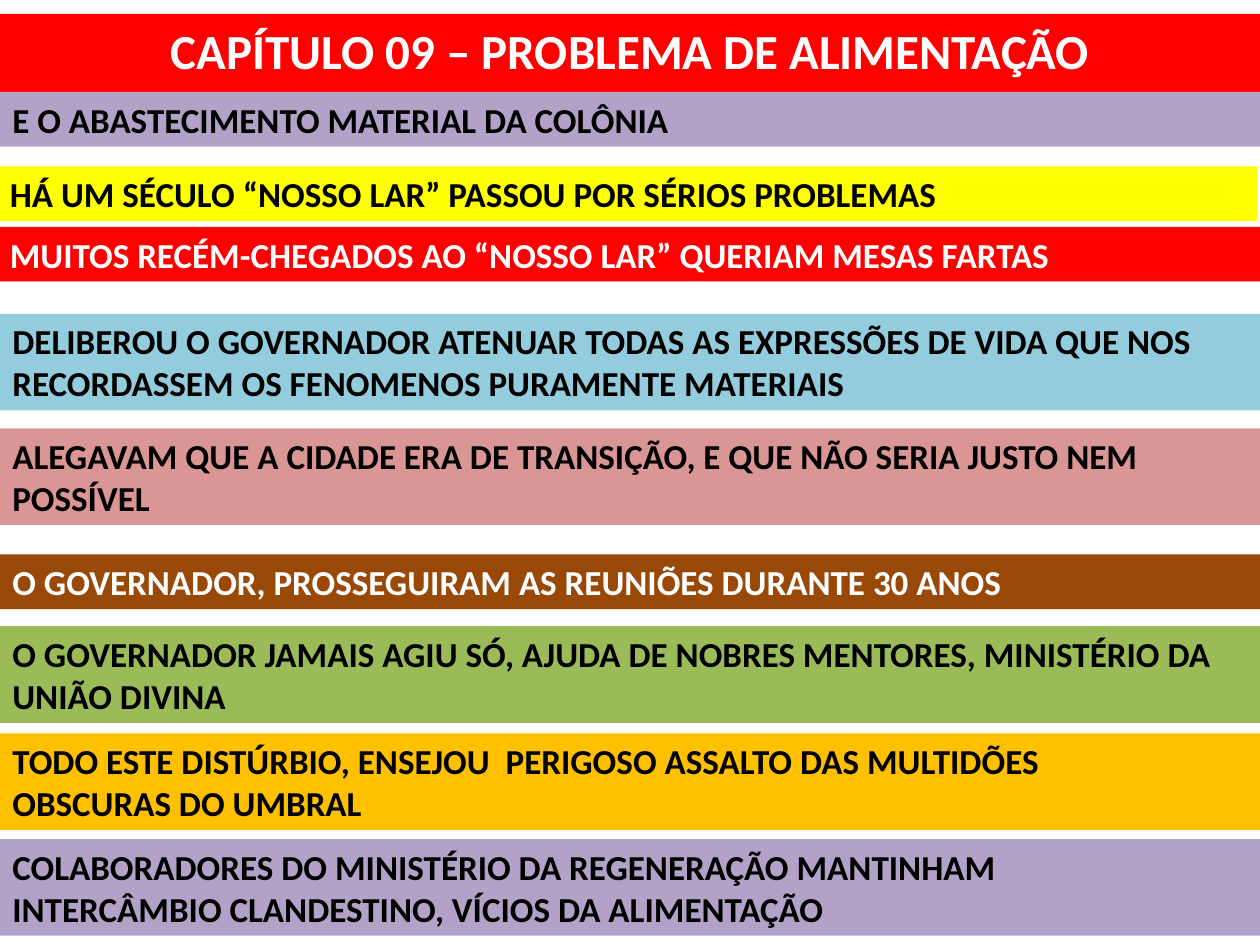
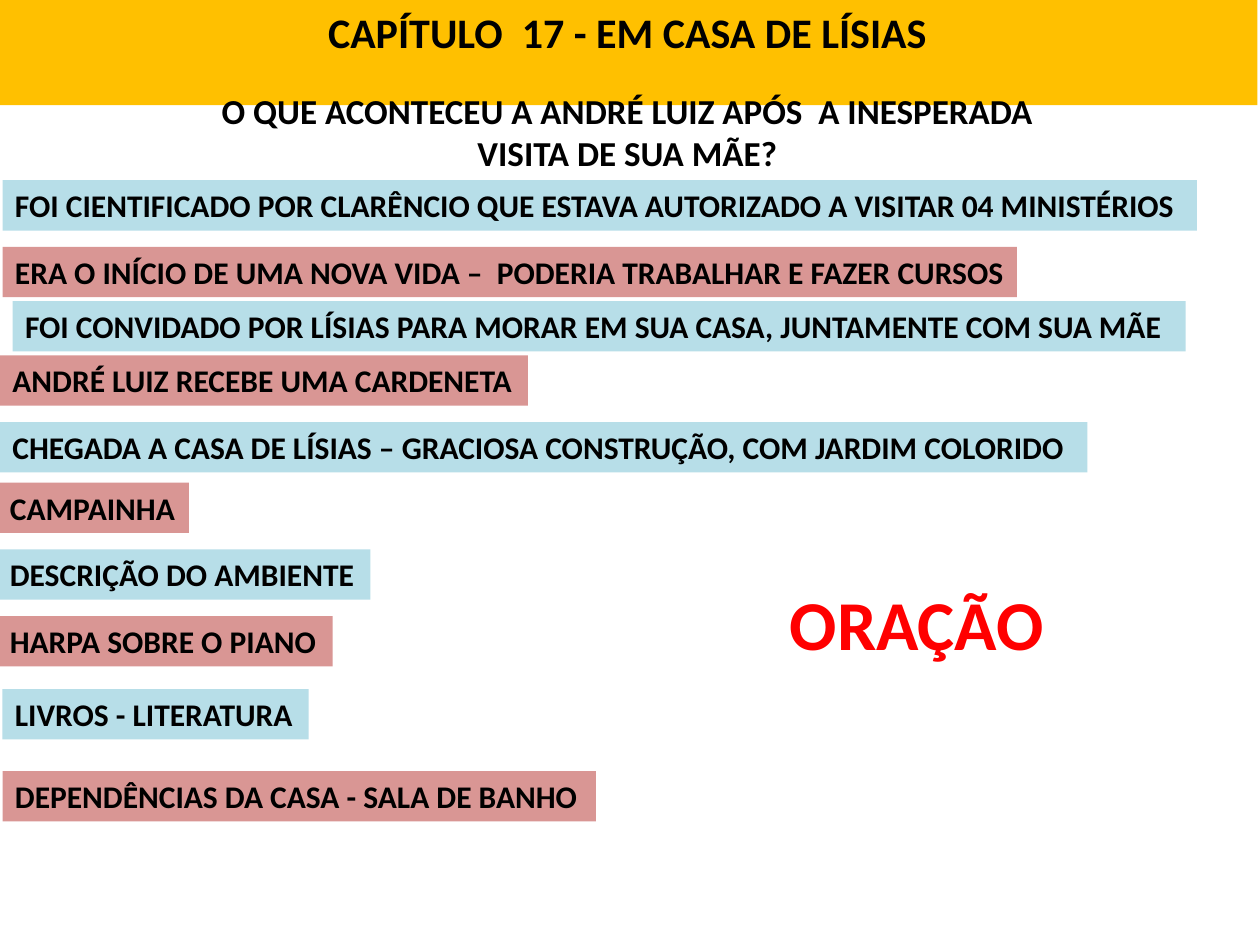
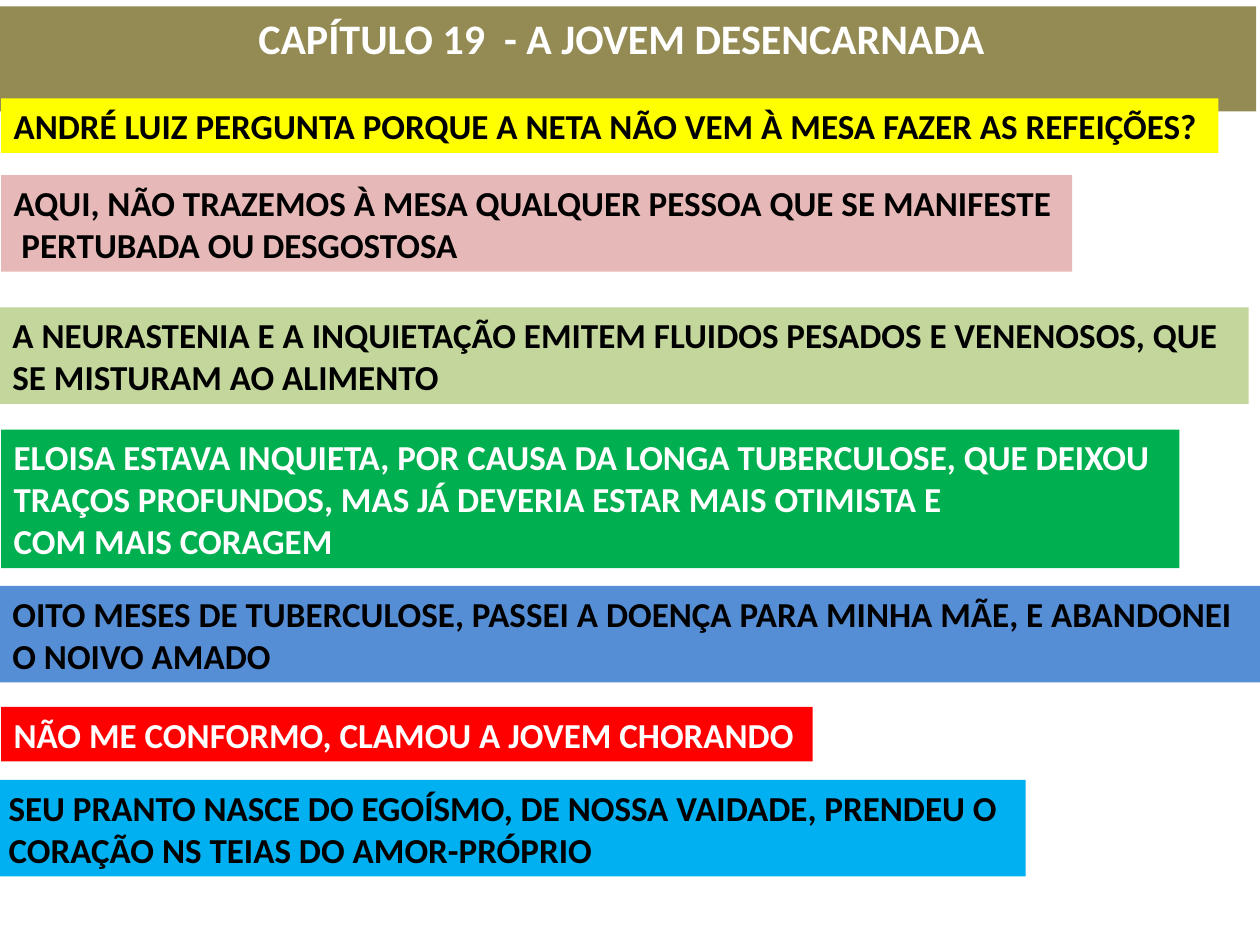
from pptx import Presentation
from pptx import util as u
from pptx.dml.color import RGBColor
from pptx.enum import text as t

BLACK = RGBColor(0x00, 0x00, 0x00)
WHITE = RGBColor(0xFF, 0xFF, 0xFF)
RED = RGBColor(0xFF, 0x00, 0x00)
YELLOW = RGBColor(0xFF, 0xFF, 0x00)
AMBER = RGBColor(0xFF, 0xC0, 0x00)
LILAC = RGBColor(0xB3, 0xA2, 0xC7)
AQUA = RGBColor(0x93, 0xCD, 0xDD)
PALE_AQUA = RGBColor(0xB7, 0xDE, 0xE8)
ROSE = RGBColor(0xD9, 0x96, 0x94)
PALE_ROSE = RGBColor(0xE6, 0xB9, 0xB8)
BROWN = RGBColor(0x98, 0x48, 0x07)
OLIVE = RGBColor(0x9B, 0xBB, 0x59)
PALE_OLIVE = RGBColor(0xC3, 0xD6, 0x9B)
KHAKI = RGBColor(0x94, 0x8A, 0x54)
GREEN = RGBColor(0x00, 0xB0, 0x50)
BLUE = RGBColor(0x55, 0x8E, 0xD5)
SKY = RGBColor(0x00, 0xB0, 0xF0)

FONT = "Calibri"
TITLE_ONLY = 5
LINE_SPACING = 1.2
PADDING = u.Inches(0.1)  # top and bottom insets together

deck = Presentation()
deck.slide_width, deck.slide_height = u.Inches(10), u.Inches(7.5)
COL = deck.slide_width / 100
ROW = deck.slide_height / 100


def write(slide, lines, left, top, width, size=20, color=BLACK, fill=None,
          align=t.PP_ALIGN.LEFT, wrap=True, rows=None, holder=None):
    """Place bold lines on a band whose height follows its rows of text."""
    rows = rows or len(lines)
    height = PADDING + rows * u.Pt(size * LINE_SPACING)
    place = [int(v) for v in (left * COL, top * ROW, width * COL, height)]
    band = holder or slide.shapes.add_textbox(*place)
    band.left, band.top, band.width, band.height = place
    if fill is not None:
        band.fill.solid()
        band.fill.fore_color.rgb = fill
    frame = band.text_frame
    frame.word_wrap = wrap
    frame.auto_size = t.MSO_AUTO_SIZE.SHAPE_TO_FIT_TEXT
    frame.vertical_anchor = t.MSO_ANCHOR.TOP
    for i, line in enumerate(lines):
        paragraph = frame.paragraphs[0] if i == 0 else frame.add_paragraph()
        paragraph.alignment = align
        run = paragraph.add_run()
        run.text = line
        run.font.name, run.font.size, run.font.bold = FONT, u.Pt(size), True
        run.font.color.rgb = color


def add_chapter(title, left, top, **style):
    """Add a slide headed by a full-width title band."""
    slide = deck.slides.add_slide(deck.slide_layouts[TITLE_ONLY])
    write(slide, [title], left, top, 100, align=t.PP_ALIGN.CENTER,
          holder=slide.shapes.title, **style)
    return slide


# Chapter 9: left, top and width in percent of the slide
food = add_chapter("CAPÍTULO 09 – PROBLEMA DE ALIMENTAÇÃO", 0, 1.47,
                   size=28, color=WHITE, fill=RED)
food_events = [
    (0, 9.73, 100, LILAC, BLACK, ["E O ABASTECIMENTO MATERIAL DA COLÔNIA"]),
    (-0.2, 17.6, 100, YELLOW, BLACK,
     ["HÁ UM SÉCULO “NOSSO LAR” PASSOU POR SÉRIOS PROBLEMAS"]),
    (-0.2, 24, 100.3, RED, WHITE,
     ["MUITOS RECÉM-CHEGADOS AO “NOSSO LAR” QUERIAM MESAS FARTAS"]),
    (0, 33.2, 100, AQUA, BLACK,
     ["DELIBEROU O GOVERNADOR ATENUAR TODAS AS EXPRESSÕES DE VIDA QUE NOS",
      "RECORDASSEM OS FENOMENOS PURAMENTE MATERIAIS"]),
    (0, 45.33, 100, ROSE, BLACK,
     ["ALEGAVAM QUE A CIDADE ERA DE TRANSIÇÃO, E QUE NÃO SERIA JUSTO NEM",
      "POSSÍVEL"]),
    (0, 58.67, 100, BROWN, WHITE,
     ["O GOVERNADOR, PROSSEGUIRAM AS REUNIÕES DURANTE 30 ANOS"]),
    (0, 66.27, 100.3, OLIVE, BLACK,
     ["O GOVERNADOR JAMAIS AGIU SÓ, AJUDA DE NOBRES MENTORES, MINISTÉRIO DA",
      "UNIÃO DIVINA"]),
    (0, 77.6, 100, AMBER, BLACK,
     ["TODO ESTE DISTÚRBIO, ENSEJOU  PERIGOSO ASSALTO DAS MULTIDÕES",
      "OBSCURAS DO UMBRAL"]),
    (0, 88.8, 100, LILAC, BLACK,
     ["COLABORADORES DO MINISTÉRIO DA REGENERAÇÃO MANTINHAM",
      "INTERCÂMBIO CLANDESTINO, VÍCIOS DA ALIMENTAÇÃO"]),
]
for left, top, width, fill, color, lines in food_events:
    write(food, lines, left, top, width, fill=fill, color=color)

# Chapter 17: bands alternate between two colours
house = add_chapter("CAPÍTULO  17 - EM CASA DE LÍSIAS", -0.2, 0,
                    size=24, fill=AMBER)
write(house, ["O QUE ACONTECEU A ANDRÉ LUIZ APÓS  A INESPERADA VISITA DE SUA MÃE?"],
      15.6, 8.8, 68.4, align=t.PP_ALIGN.CENTER, rows=2)
house_events = [
    (0.2, 19.07, 94.8,
     "FOI CIENTIFICADO POR CLARÊNCIO QUE ESTAVA AUTORIZADO A VISITAR 04 MINISTÉRIOS"),
    (0.2, 26.13, 80.5,
     "ERA O INÍCIO DE UMA NOVA VIDA –  PODERIA TRABALHAR E FAZER CURSOS"),
    (1, 31.87, 93.1,
     "FOI CONVIDADO POR LÍSIAS PARA MORAR EM SUA CASA, JUNTAMENTE COM SUA MÃE"),
    (0, 37.6, 41.9, "ANDRÉ LUIZ RECEBE UMA CARDENETA"),
    (0, 44.67, 86.3,
     "CHEGADA A CASA DE LÍSIAS – GRACIOSA CONSTRUÇÃO, COM JARDIM COLORIDO"),
    (-0.2, 51.07, 15.2, "CAMPAINHA"),
    (-0.2, 58.13, 29.6, "DESCRIÇÃO DO AMBIENTE"),
    (-0.2, 65.2, 26.6, "HARPA SOBRE O PIANO"),
    (0.2, 72.93, 24.3, "LIVROS - LITERATURA"),
    (0.2, 81.6, 47.1, "DEPENDÊNCIAS DA CASA - SALA DE BANHO"),
]
for i, (left, top, width, line) in enumerate(house_events):
    write(house, [line], left, top, width, size=18, wrap=False,
          fill=(PALE_AQUA, ROSE)[i % 2])
write(house, ["ORAÇÃO"], 61.7, 60.8, 22.4, size=40, color=RED, wrap=False)

# Chapter 19
girl = add_chapter("CAPÍTULO 19  - A JOVEM DESENCARNADA ", -0.3, 0.67,
                   size=24, color=WHITE, fill=KHAKI)
girl_events = [
    (0.1, 10.4, 96.6, YELLOW, BLACK,
     ["ANDRÉ LUIZ PERGUNTA PORQUE A NETA NÃO VEM À MESA FAZER AS REFEIÇÕES?"]),
    (0.1, 18.53, 85, PALE_ROSE, BLACK,
     ["AQUI, NÃO TRAZEMOS À MESA QUALQUER PESSOA QUE SE MANIFESTE",
      " PERTUBADA OU DESGOSTOSA"]),
    (0, 32.53, 99.1, PALE_OLIVE, BLACK,
     ["A NEURASTENIA E A INQUIETAÇÃO EMITEM FLUIDOS PESADOS E VENENOSOS, QUE",
      "SE MISTURAM AO ALIMENTO"]),
    (0.1, 45.47, 93.5, GREEN, WHITE,
     ["ELOISA ESTAVA INQUIETA, POR CAUSA DA LONGA TUBERCULOSE, QUE DEIXOU",
      "TRAÇOS PROFUNDOS, MAS JÁ DEVERIA ESTAR MAIS OTIMISTA E",
      "COM MAIS CORAGEM"]),
    (0, 62, 100.2, BLUE, BLACK,
     ["OITO MESES DE TUBERCULOSE, PASSEI A DOENÇA PARA MINHA MÃE, E ABANDONEI",
      "O NOIVO AMADO"]),
    (0.1, 74.8, 64.4, RED, WHITE,
     ["NÃO ME CONFORMO, CLAMOU A JOVEM CHORANDO"]),
    (-0.3, 82.53, 81.7, SKY, BLACK,
     ["SEU PRANTO NASCE DO EGOÍSMO, DE NOSSA VAIDADE, PRENDEU O",
      "CORAÇÃO NS TEIAS DO AMOR-PRÓPRIO"]),
]
for left, top, width, fill, color, lines in girl_events:
    write(girl, lines, left, top, width, fill=fill, color=color, wrap=False)

deck.save("out.pptx")
